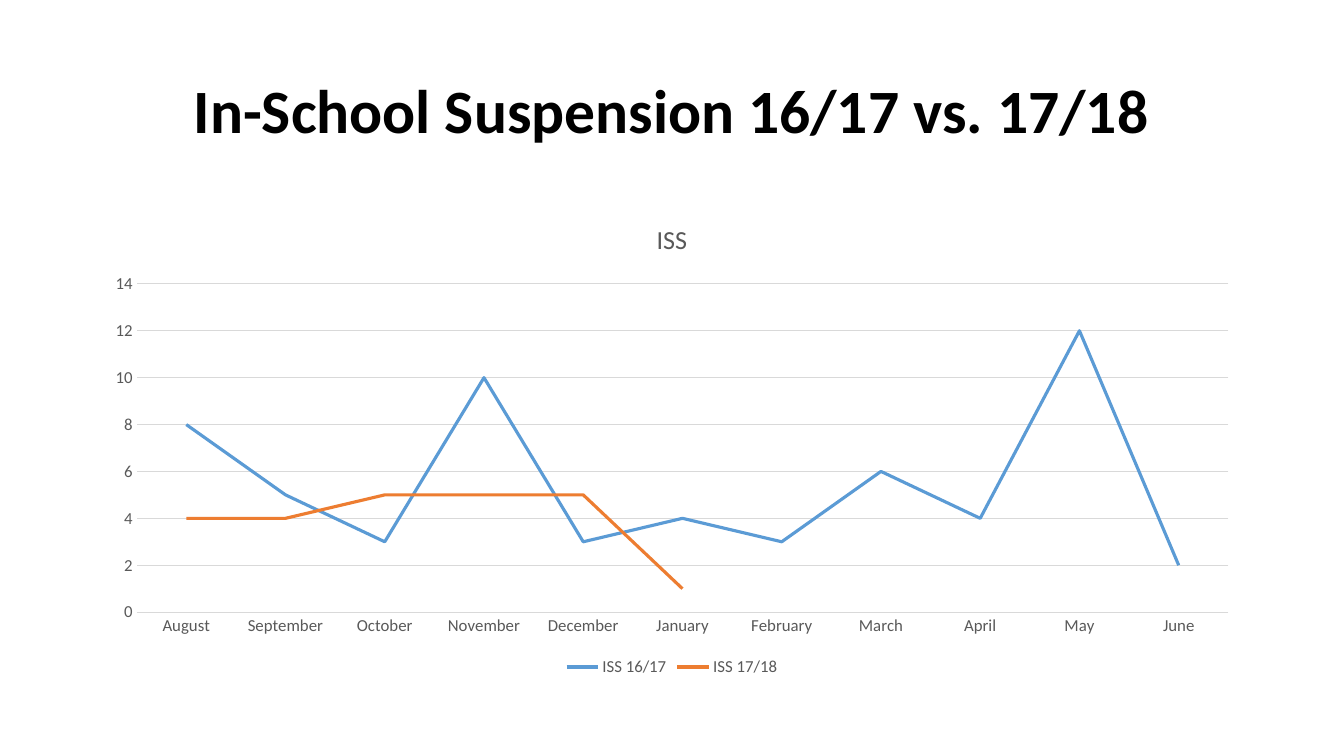
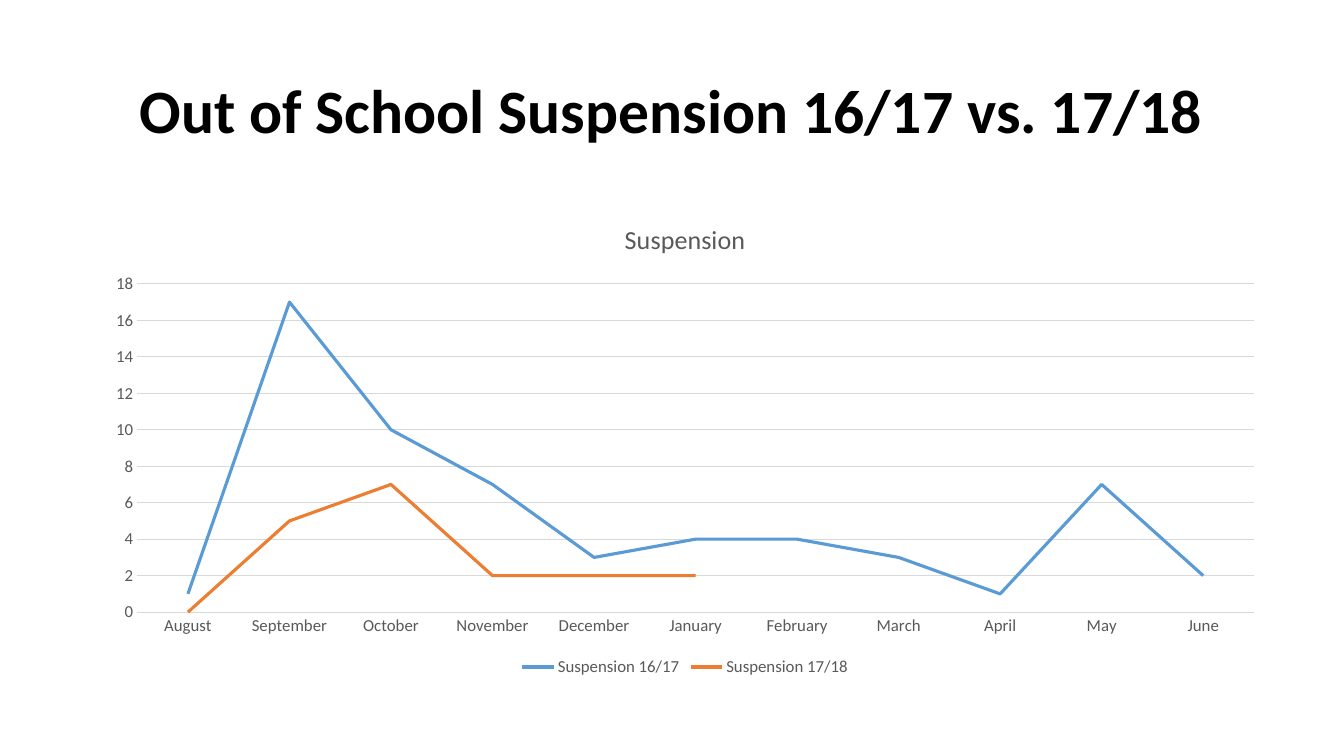
from pptx import Presentation
from pptx.chart.data import CategoryChartData
from pptx.dml.color import RGBColor
from pptx.enum.chart import (XL_CHART_TYPE as ChartType, XL_LEGEND_POSITION as LegendPos,
                             XL_MARKER_STYLE as Marker, XL_TICK_MARK as Tick)
from pptx.enum.text import MSO_ANCHOR as Anchor, PP_ALIGN as Align
from pptx.util import Cm, Pt

# Content
MONTHS = ["August", "September", "October", "November", "December", "January",
          "February", "March", "April", "May", "June"]
YEARS = ["16/17", "17/18"]
SLIDES = [
    {"title": "In-School Suspension 16/17 vs. 17/18", "measure": "ISS", "width": Cm(29.21),
     "counts": [[8, 5, 3, 10, 3, 4, 3, 6, 4, 12, 2], [4, 4, 5, 5, 5, 1]], "top_value": 14},
    {"title": "Out of School Suspension 16/17 vs. 17/18", "measure": "Suspension",
     "width": Cm(29.87),
     "counts": [[1, 17, 10, 7, 3, 4, 4, 3, 1, 7, 2], [0, 5, 7, 2, 2, 2]], "top_value": 18},
]

# Shared style
FONT = "Calibri"
BLACK = RGBColor(0x00, 0x00, 0x00)
GREY = RGBColor(0x59, 0x59, 0x59)
GRID = RGBColor(0xD9, 0xD9, 0xD9)
YEAR_COLOURS = [RGBColor(0x5B, 0x9B, 0xD5), RGBColor(0xED, 0x7D, 0x31)]
LEFT = Cm(2.33)
TITLE_TOP, TITLE_WIDTH, TITLE_HEIGHT = Cm(1.01), Cm(29.21), Cm(3.68)
CHART_TOP, CHART_HEIGHT = Cm(5.07), Cm(12.09)


def style_font(font, size=12, colour=GREY, bold=False):
    font.name, font.size, font.bold = FONT, Pt(size), bold
    font.color.rgb = colour


def write_text(frame, text, align=Align.CENTER, spacing=None, **style):
    paragraph = frame.paragraphs[0]
    paragraph.alignment, paragraph.line_spacing = align, spacing
    run = paragraph.add_run()
    run.text = text
    style_font(run.font, **style)


def style_line(line, colour, width):
    line.color.rgb, line.width = colour, Pt(width)


def add_title(slide, text):
    title = slide.shapes.title
    title.left, title.top, title.width, title.height = LEFT, TITLE_TOP, TITLE_WIDTH, TITLE_HEIGHT
    title.text_frame.vertical_anchor = Anchor.MIDDLE
    title.text_frame.word_wrap = True
    write_text(title.text_frame, text, spacing=0.9, size=44, colour=BLACK, bold=True)


def add_trend(slide, measure, counts, width, top_value):
    # Months without a count yet stay empty
    data = CategoryChartData()
    data.categories = MONTHS
    for year, values in zip(YEARS, counts):
        data.add_series(f"{measure} {year}", values + [None] * (len(MONTHS) - len(values)))
    chart = slide.shapes.add_chart(ChartType.LINE, LEFT, CHART_TOP, width, CHART_HEIGHT, data).chart
    style_font(chart.font, size=10, colour=BLACK)

    # Chart title and legend
    chart.has_title = True
    write_text(chart.chart_title.text_frame, measure, size=18.6)
    chart.chart_title.include_in_layout = False
    chart.has_legend = True
    chart.legend.position = LegendPos.BOTTOM
    chart.legend.include_in_layout = False
    style_font(chart.legend.font)

    # Axes
    months, scale = chart.category_axis, chart.value_axis
    for axis in (months, scale):
        axis.major_tick_mark = axis.minor_tick_mark = Tick.NONE
        style_font(axis.tick_labels.font)
    style_line(months.format.line, GRID, 0.75)
    scale.format.line.fill.background()
    scale.minimum_scale, scale.maximum_scale, scale.major_unit = 0, top_value, 2
    scale.has_major_gridlines = True
    style_line(scale.major_gridlines.format.line, GRID, 0.75)

    # One line per school year
    plot = chart.plots[0]
    plot.vary_by_categories = False
    for series, colour in zip(plot.series, YEAR_COLOURS):
        series.smooth = False
        series.marker.style = Marker.NONE
        style_line(series.format.line, colour, 2.25)


def main():
    deck = Presentation()
    deck.slide_width, deck.slide_height = Cm(33.87), Cm(19.05)
    title_only = deck.slide_layouts[5]
    for content in SLIDES:
        slide = deck.slides.add_slide(title_only)
        add_title(slide, content["title"])
        add_trend(slide, content["measure"], content["counts"], content["width"],
                  content["top_value"])
    deck.save("out.pptx")


if __name__ == "__main__":
    main()
